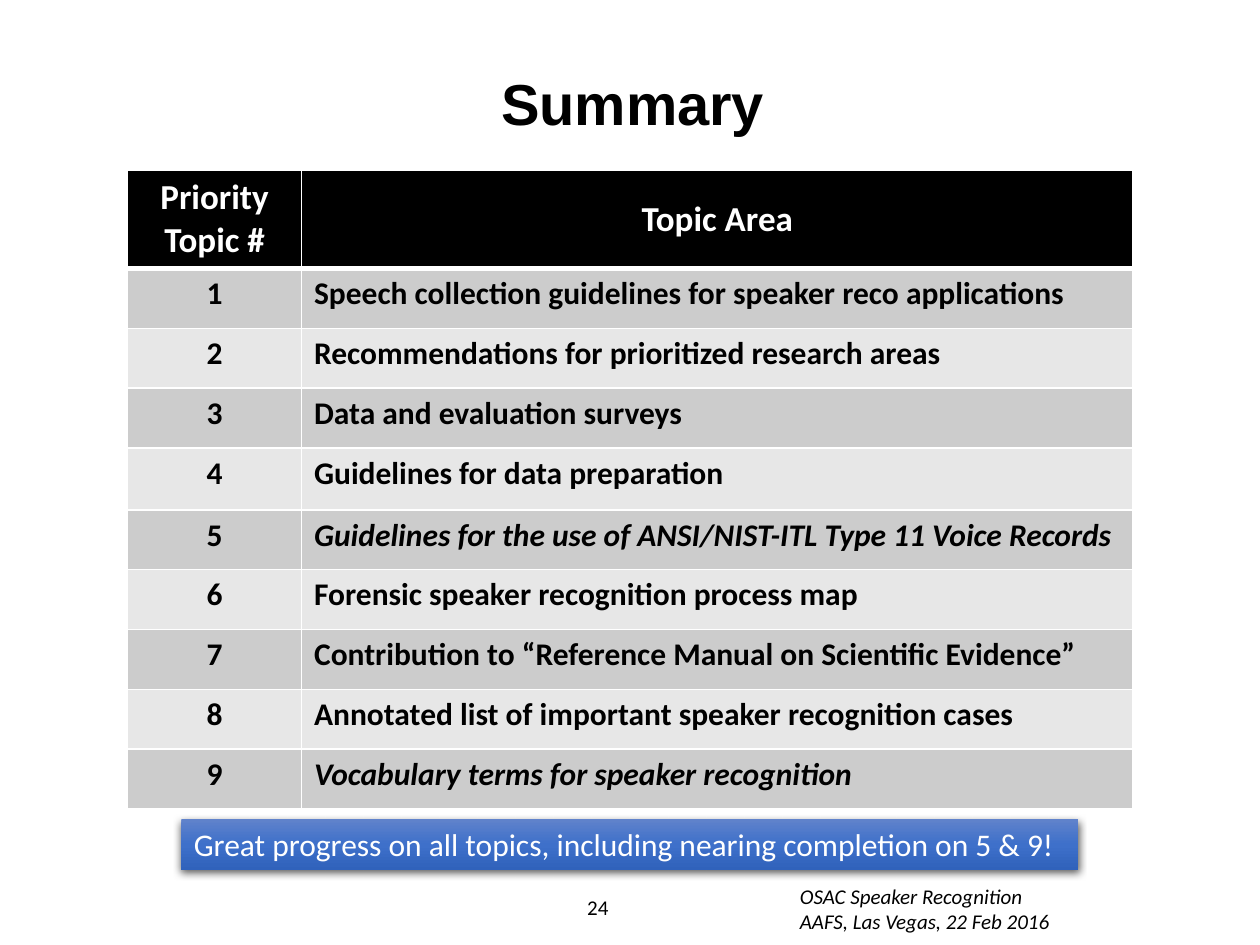
from lxml import etree
from pptx import Presentation
from pptx.dml.color import RGBColor
from pptx.enum.shapes import MSO_SHAPE
from pptx.enum.text import MSO_ANCHOR, PP_ALIGN
from pptx.oxml import parse_xml
from pptx.oxml.ns import qn
from pptx.util import Pt

RECT = MSO_SHAPE.RECTANGLE
TOP, MID = MSO_ANCHOR.TOP, MSO_ANCHOR.MIDDLE
LEFT, CENTER = PP_ALIGN.LEFT, PP_ALIGN.CENTER
NS = 'xmlns:a="http://schemas.openxmlformats.org/drawingml/2006/main"'

HEX = {
    "black": "000000", "white": "FFFFFF", "dark": "CCCCCC", "pale": "E7E7E7",
    "light": "6183CB", "blue": "3E70CA", "deep": "3062BB",
}
TOPICS = [
    "Speech collection guidelines for speaker reco applications",
    "Recommendations for prioritized research areas",
    "Data and evaluation surveys",
    "Guidelines for data preparation",
    "Guidelines for the use of ANSI/NIST-ITL Type 11 Voice Records",
    "Forensic speaker recognition process map",
    "Contribution to “Reference Manual on Scientific Evidence”",
    "Annotated list of important speaker recognition cases",
    "Vocabulary terms for speaker recognition",
]
NEAR_DONE = (5, 9)


def color(name):
    return RGBColor.from_string(HEX[name])


def write(frame, lines, size, tint="black", align=LEFT, anchor=TOP,
          bold=False, italic=False, face="Calibri"):
    frame.vertical_anchor = anchor
    for i, line in enumerate(lines):
        para = frame.add_paragraph() if i else frame.paragraphs[0]
        para.alignment = align
        run = para.add_run()
        run.text = line
        font = run.font
        font.name, font.size = face, Pt(size)
        font.bold, font.italic = bold, italic
        font.color.rgb = color(tint)


def add_title(slide, text):
    title = slide.shapes.title
    title.left, title.top = Pt(101.5), Pt(39.6)
    title.width, title.height = Pt(520), Pt(104.4)
    write(title.text_frame, [text], 33, align=CENTER, bold=True, face="Arial")
    title.text_frame.paragraphs[0].line_spacing = 0.9


def add_text(slide, box, lines, size, wrap=True, **style):
    frame = slide.shapes.add_textbox(*map(Pt, box)).text_frame
    frame.word_wrap = wrap
    write(frame, lines, size, **style)


def edge(cell, top, base):
    props = cell._tc.get_or_add_tcPr()
    for i, (side, width) in enumerate(
            [("L", 1), ("R", 1), ("T", top), ("B", base)]):
        props.insert(i, parse_xml(
            f'<a:ln{side} {NS} w="{Pt(width)}"><a:solidFill>'
            f'<a:srgbClr val="{HEX["white"]}"/></a:solidFill></a:ln{side}>'))


def add_cell(cell, row, lines, size, fill, **style):
    cell.fill.solid()
    cell.fill.fore_color.rgb = color(fill)
    edge(cell, 3 if row == 1 else 1, 3 if row == 0 else 1)
    write(cell.text_frame, lines, size, bold=True, **style)
    cell.vertical_anchor = TOP if row else MID


def add_topics(slide):
    count = len(TOPICS) + 1
    table = slide.shapes.add_table(
        count, 2, Pt(73), Pt(97.2), Pt(574.5), Pt(364)).table
    table.columns[0].width, table.columns[1].width = Pt(99.3), Pt(475.2)
    for i, row in enumerate(table.rows):
        row.height = Pt({0: 56, 4: 35.4}.get(i, 34.2))
    for col, head in enumerate([["Priority", "Topic #"], ["Topic Area"]]):
        add_cell(table.cell(0, col), 0, head, 20, "black",
                 tint="white", align=CENTER)
    for i, topic in enumerate(TOPICS, 1):
        fill = "dark" if i % 2 else "pale"
        add_cell(table.cell(i, 0), i, [str(i)], 18, fill, align=CENTER)
        add_cell(table.cell(i, 1), i, [topic], 18, fill,
                 italic=i in NEAR_DONE)


def add_banner(slide, text):
    shape = slide.shapes.add_shape(
        RECT, Pt(103.7), Pt(468), Pt(512.6), Pt(29))
    shape.line.fill.background()
    shape.shadow.inherit = False
    props = shape._element.spPr
    stops = "".join(
        f'<a:gs pos="{pos}"><a:srgbClr val="{HEX[name]}"/></a:gs>'
        for pos, name in [(0, "light"), (50000, "blue"), (100000, "deep")])
    props.insert(2, parse_xml(
        f'<a:gradFill {NS} rotWithShape="1"><a:gsLst>{stops}</a:gsLst>'
        '<a:lin ang="5400000" scaled="0"/></a:gradFill>'))
    shade = etree.SubElement(
        props.find(qn("a:effectLst")), qn("a:outerShdw"),
        blurRad=str(Pt(4.5)), dist=str(Pt(1.5)), dir="5400000",
        algn="ctr", rotWithShape="0")
    tone = etree.SubElement(shade, qn("a:srgbClr"), val=HEX["black"])
    etree.SubElement(tone, qn("a:alpha"), val="63000")
    shape.text_frame.word_wrap = True
    write(shape.text_frame, [text], 18, tint="white", anchor=MID)


def main():
    deck = Presentation()
    deck.slide_width, deck.slide_height = Pt(720), Pt(540)
    slide = deck.slides.add_slide(deck.slide_layouts[5])
    add_title(slide, "Summary")
    add_topics(slide)
    add_banner(slide, "Great progress on all topics, including nearing "
                      "completion on 5 & 9!")
    add_text(slide, (260.6, 507.6, 162, 28.8), ["24"], 12, align=CENTER)
    add_text(slide, (450, 501.1, 158.4, 36),
             ["OSAC Speaker Recognition", "AAFS, Las Vegas, 22 Feb 2016"],
             12, wrap=False, italic=True)
    deck.save("out.pptx")


if __name__ == "__main__":
    main()
